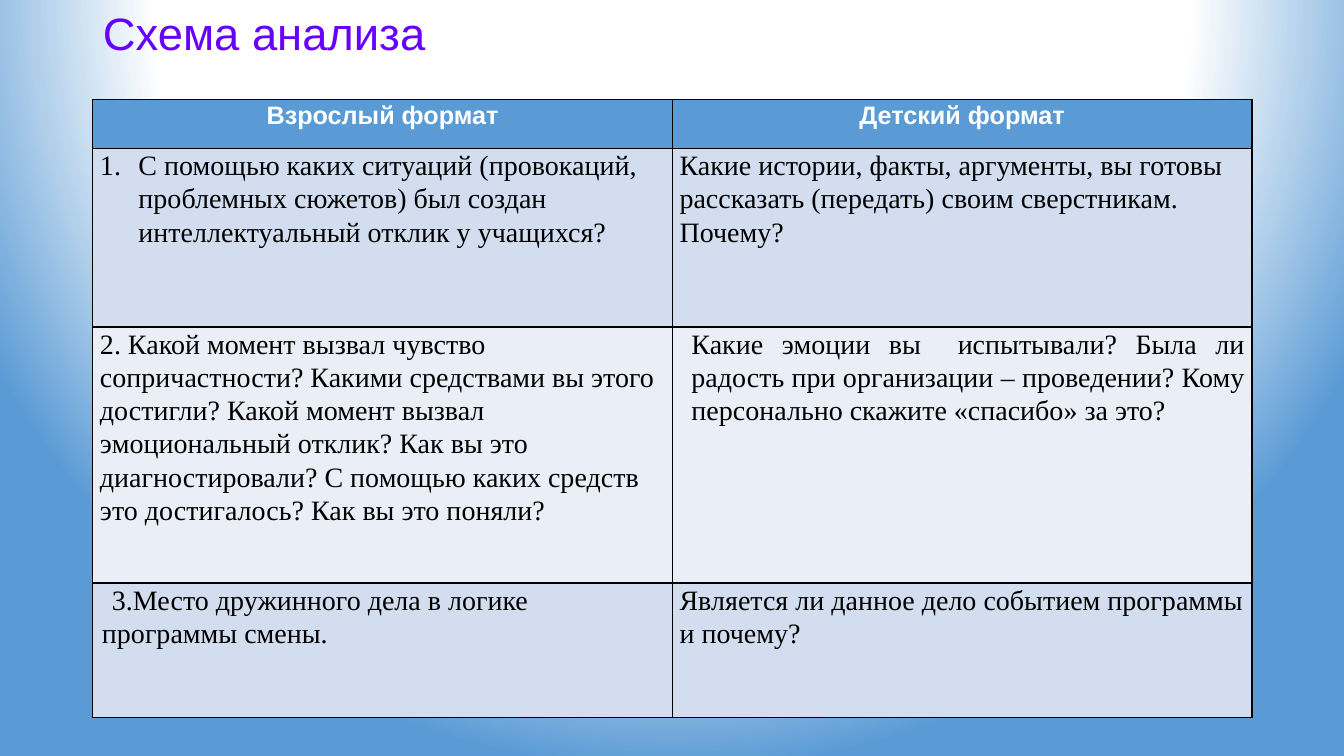
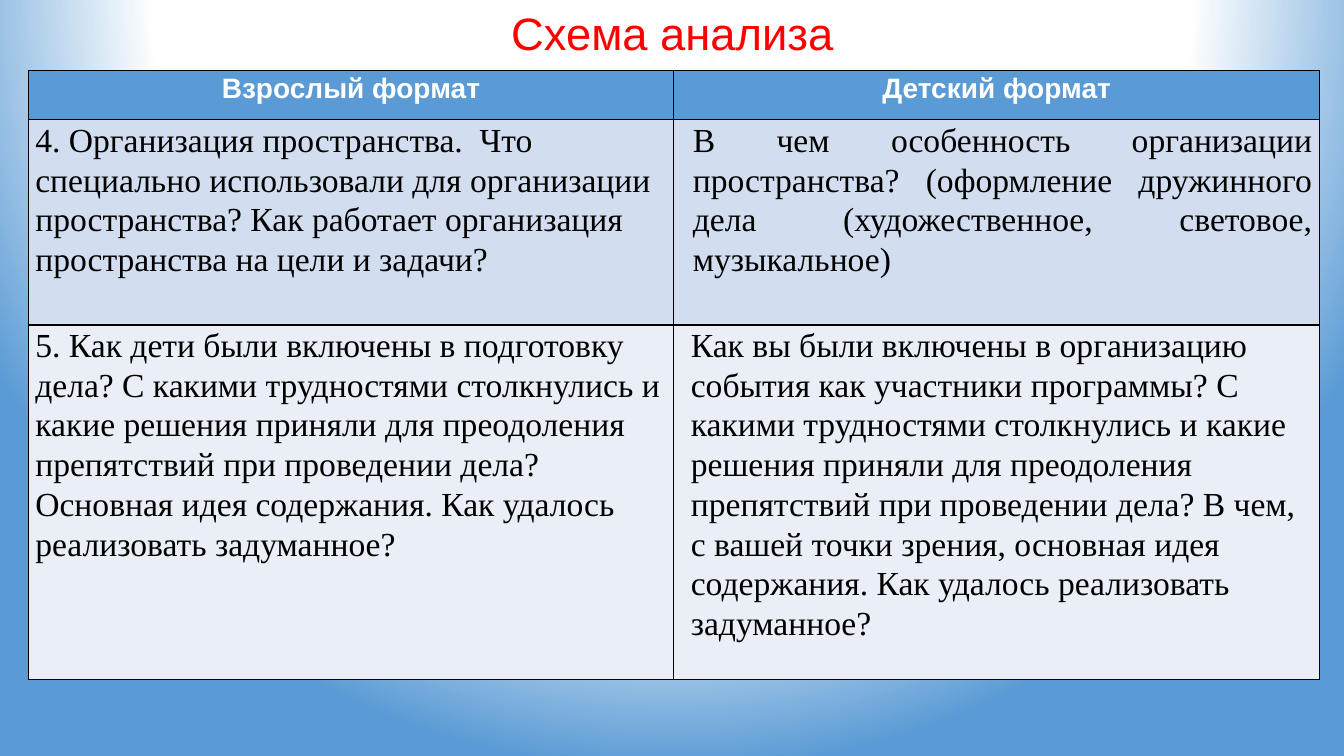
from typing import NamedTuple

from lxml.etree import SubElement
from pptx import Presentation
from pptx.dml.color import RGBColor
from pptx.enum.text import MSO_ANCHOR, MSO_AUTO_SIZE, PP_ALIGN
from pptx.oxml import parse_xml
from pptx.oxml.ns import nsdecls, qn
from pptx.util import Cm, Pt

WHITE = RGBColor(0xFF, 0xFF, 0xFF)
BLACK = RGBColor(0x00, 0x00, 0x00)
BLUE = RGBColor(0x5B, 0x9B, 0xD5)
VIOLET = RGBColor(0x66, 0x00, 0xFF)
RED = RGBColor(0xFF, 0x00, 0x00)
BANDS = (RGBColor(0xD2, 0xDE, 0xEF), RGBColor(0xEA, 0xEF, 0xF7))
HEADINGS = ("Взрослый формат", "Детский формат")


class Entry(NamedTuple):
    """Text of one table cell with its paragraph layout in centimetres."""

    text: str
    align: PP_ALIGN = PP_ALIGN.LEFT
    left: float = 0
    first: float = 0
    numbered: bool = False


class Deck:
    """Holds the shared style and the current slide."""

    heading_font = "Arial"
    body_font = "Times New Roman"
    width, height = Cm(33.87), Cm(19.05)

    def __init__(self):
        """Open a wide presentation with the shared background."""
        self.presentation = Presentation()
        self.presentation.slide_width = self.width
        self.presentation.slide_height = self.height
        self.slide = None
        self.paint_background()

    def paint_background(self):
        """Give the master a circular glow from white to blue."""
        master = self.presentation.slide_master
        master.background.fill.solid()
        properties = master.element.find(".//" + qn("p:bgPr"))
        properties.remove(properties[0])
        stops = "".join(
            f'<a:gs pos="{position}"><a:srgbClr val="{color}"/></a:gs>'
            for position, color in ((0, WHITE), (67000, WHITE), (100000, BLUE))
        )
        properties.insert(0, parse_xml(
            f'<a:gradFill {nsdecls("a")} rotWithShape="1"><a:gsLst>{stops}</a:gsLst>'
            '<a:path path="circle"><a:fillToRect l="50000" t="-80000" r="50000" b="180000"/>'
            '</a:path></a:gradFill>'
        ))

    def add_slide(self, title, color, align):
        """Start a slide and format its title."""
        self.slide = self.presentation.slides.add_slide(self.presentation.slide_layouts[5])
        heading = self.slide.shapes.title
        heading.left, heading.top = Cm(2.34), Cm(0.15)
        heading.width, heading.height = Cm(29.21), Cm(1.5)
        frame = heading.text_frame
        frame.auto_size = MSO_AUTO_SIZE.NONE
        frame.vertical_anchor = MSO_ANCHOR.MIDDLE
        frame.text = title
        self.format_paragraph(frame.paragraphs[0], self.heading_font, 32.4, color, align, 0.9)

    def format_paragraph(self, paragraph, font, size, color, align, spacing=1.07, bold=False):
        """Apply alignment, spacing and font to a paragraph."""
        paragraph.alignment = align
        paragraph.line_spacing = spacing
        for run in paragraph.runs:
            run.font.name = font
            run.font.size = Pt(size)
            run.font.bold = bold
            run.font.color.rgb = color

    def add_table(self, left, top, width, row_heights, questions, heading_size, body_size):
        """Draw the two-column table of questions under its headings."""
        table = self.slide.shapes.add_table(
            len(row_heights), len(HEADINGS), Cm(left), Cm(top), Cm(width), Cm(sum(row_heights))
        ).table
        for column in table.columns:
            column.width = Cm(width / len(HEADINGS))
        for row, row_height in zip(table.rows, row_heights):
            row.height = Cm(row_height)
        for index, heading in enumerate(HEADINGS):
            paragraph = self.fill_cell(table.cell(0, index), heading, BLUE)
            self.format_paragraph(
                paragraph, self.heading_font, heading_size, WHITE, PP_ALIGN.CENTER, bold=True
            )
        for row_index, entries in enumerate(questions):
            band = BANDS[row_index % len(BANDS)]
            for index, entry in enumerate(entries):
                paragraph = self.fill_cell(table.cell(row_index + 1, index), entry.text, band)
                self.format_paragraph(paragraph, self.body_font, body_size, BLACK, entry.align)
                self.indent(paragraph, entry)

    def fill_cell(self, cell, text, color):
        """Set margins, borders, fill and text of a cell and return its paragraph."""
        cell.margin_left = cell.margin_right = Cm(0.18)
        cell.margin_top = cell.margin_bottom = 0
        properties = cell._tc.get_or_add_tcPr()
        for side in ("a:lnL", "a:lnR", "a:lnT", "a:lnB"):
            border = SubElement(properties, qn(side), w=str(Pt(1)))
            SubElement(SubElement(border, qn("a:solidFill")), qn("a:srgbClr"), val=str(BLACK))
        cell.fill.solid()
        cell.fill.fore_color.rgb = color
        cell.text_frame.text = text
        return cell.text_frame.paragraphs[0]

    def indent(self, paragraph, entry):
        """Set the indents and the optional automatic number."""
        properties = paragraph._p.get_or_add_pPr()
        properties.set("marL", str(Cm(entry.left)))
        properties.set("indent", str(Cm(entry.first)))
        if entry.numbered:
            SubElement(properties, qn("a:buAutoNum"), type="arabicPeriod")

    def save(self):
        """Write the presentation."""
        self.presentation.save("out.pptx")


MEANING_QUESTIONS = (
    (
        Entry("С помощью каких ситуаций (провокаций, проблемных сюжетов) был создан "
              "интеллектуальный отклик у учащихся?", left=0.97, first=-0.97, numbered=True),
        Entry("Какие истории, факты, аргументы, вы готовы рассказать (передать) своим "
              "сверстникам. Почему?"),
    ),
    (
        Entry("2. Какой момент вызвал чувство сопричастности? Какими средствами вы этого "
              "достигли? Какой момент вызвал эмоциональный отклик? Как вы это "
              "диагностировали? С помощью каких средств это достигалось? Как вы это поняли?"),
        Entry("Какие эмоции вы  испытывали? Была ли радость при организации – проведении? "
              "Кому персонально скажите «спасибо» за это?", PP_ALIGN.JUSTIFY, 0.3),
    ),
    (
        Entry("3.Место дружинного дела в логике программы смены.", left=0.05, first=0.25),
        Entry("Является ли данное дело событием программы и почему?"),
    ),
)

ORGANISATION_QUESTIONS = (
    (
        Entry("4. Организация пространства.  Что специально использовали для организации "
              "пространства? Как работает организация пространства на цели и задачи?"),
        Entry("В чем особенность организации пространства? (оформление дружинного дела "
              "(художественное, световое, музыкальное)", PP_ALIGN.JUSTIFY, 0.3),
    ),
    (
        Entry("5. Как дети были включены в подготовку дела? С какими трудностями "
              "столкнулись и какие решения приняли для преодоления препятствий при "
              "проведении дела? Основная идея содержания. Как удалось реализовать "
              "задуманное?"),
        Entry("Как вы были включены в организацию события как участники программы? С "
              "какими трудностями столкнулись и какие решения приняли для преодоления "
              "препятствий при проведении дела? В чем, с вашей точки зрения, основная "
              "идея содержания. Как удалось реализовать задуманное?", left=0.25),
    ),
)


def main():
    """Build both slides of the analysis scheme."""
    deck = Deck()
    title = "Схема анализа"
    deck.add_slide(title, VIOLET, PP_ALIGN.LEFT)
    deck.add_table(2.34, 2.5, 29.21, (1.24, 4.5, 6.45, 3.4), MEANING_QUESTIONS, 18, 20)
    deck.add_slide(title, RED, PP_ALIGN.CENTER)
    deck.add_table(0.71, 1.78, 32.54, (1.24, 5.17, 8.94), ORGANISATION_QUESTIONS, 20, 24)
    deck.save()


if __name__ == "__main__":
    main()
